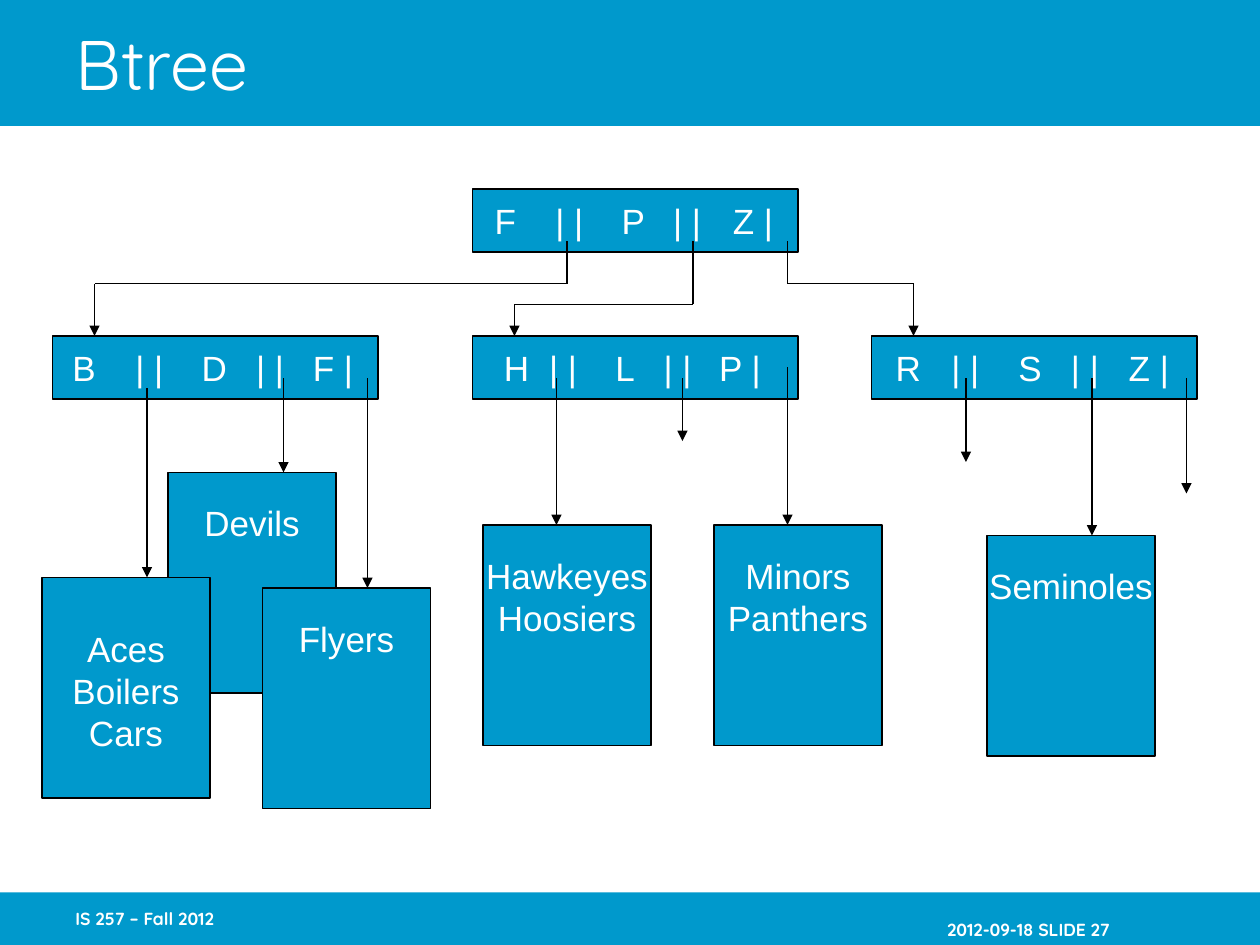
"""Build a slide that shows a B-tree of team names."""
from dataclasses import dataclass

from lxml import etree
from pptx import Presentation
from pptx import util as u
from pptx.dml import color
from pptx.enum import shapes, text
from pptx.oxml import ns

SCALE = 7620
COLORS = {"blue": "0099CC", "black": "000000", "white": "FFFFFF"}
NODE_SIZE = (310, 60)
LEAF_SIZE = (160, 210)
CHILD_TOP = 320
KEY_SEPARATOR = "| |"


@dataclass(frozen=True)
class Node:
    left: int
    top: int
    keys: tuple[str, str, str]
    stops: tuple[int, ...]


@dataclass(frozen=True)
class Leaf:
    left: int
    top: int
    names: tuple[str, ...]
    text_top: int = 28


@dataclass(frozen=True)
class Branch:
    start: int
    bend: int
    end: int


@dataclass(frozen=True)
class Drop:
    x: int
    top: int
    bottom: int


NODES = [
    Node(450, 180, ("F", "P", "Z"), (21, 79, 142, 191, 248)),
    Node(830, CHILD_TOP, ("R", "S", "Z"), (23, 76, 140, 190, 245)),
    Node(450, CHILD_TOP, ("H", "L", "P"), (30, 73, 136, 182, 235)),
    Node(50, CHILD_TOP, ("B", "D", "F"), (19, 79, 142, 194, 248)),
]
LEAVES = [
    Leaf(160, 450, ("Devils",)),
    Leaf(40, 550, ("Aces", "Boilers", "Cars"), 48),
    Leaf(680, 500, ("Minors", "Panthers")),
    Leaf(940, 510, ("Seminoles",)),
    Leaf(250, 560, ("Flyers",)),
    Leaf(460, 500, ("Hawkeyes", "Hoosiers")),
]
BRANCHES = [Branch(540, 270, 90), Branch(660, 290, 490), Branch(750, 270, 870)]
DROPS = [
    Drop(140, 370, 550), Drop(270, 360, 450), Drop(350, 360, 560),
    Drop(530, 360, 500), Drop(650, 360, 420), Drop(750, 350, 500),
    Drop(920, 360, 440), Drop(1040, 360, 510), Drop(1130, 360, 470),
]


def px(length: int) -> u.Emu:
    return u.Emu(length * SCALE)


def rgb(name: str) -> color.RGBColor:
    return color.RGBColor.from_string(COLORS[name])


def set_frame(frame, anchor, left=0, top=0, right=0, bottom=0, wrap=True) -> None:
    frame.vertical_anchor = anchor
    frame.word_wrap = wrap
    frame.margin_left, frame.margin_top = px(left), px(top)
    frame.margin_right, frame.margin_bottom = px(right), px(bottom)


def add_span(para, words: str, size: int, font: str, bold: bool = False) -> None:
    span = para.add_run()
    span.text = words
    span.font.size = u.Pt(size)
    span.font.name = font
    span.font.bold = bold
    span.font.color.rgb = rgb("white")


def add_box(page, left: int, top: int, width: int, height: int, outlined=True):
    box = page.shapes.add_shape(
        shapes.MSO_SHAPE.RECTANGLE, px(left), px(top), px(width), px(height))
    box.shadow.inherit = False
    box.fill.solid()
    box.fill.fore_color.rgb = rgb("blue")
    if outlined:
        box.line.color.rgb = rgb("black")
        box.line.width = u.Pt(0.75)
    else:
        box.line.fill.background()
    return box


def add_tab_stops(para, positions: list[int]) -> None:
    properties = para._p.get_or_add_pPr()
    tabs = etree.SubElement(properties, ns.qn("a:tabLst"))
    for position in positions:
        etree.SubElement(tabs, ns.qn("a:tab"), pos=str(px(position)), algn="l")


def add_node(page, node: Node) -> None:
    frame = add_box(page, node.left, node.top, *NODE_SIZE).text_frame
    first, *others = node.stops
    set_frame(frame, text.MSO_ANCHOR.MIDDLE, left=first)
    para = frame.paragraphs[0]
    para.alignment = text.PP_ALIGN.LEFT
    add_tab_stops(para, [stop - first for stop in others])
    low, middle, high = node.keys
    fields = (low, KEY_SEPARATOR, middle, KEY_SEPARATOR, f"{high} |")
    add_span(para, "\t".join(fields), 20, "Arial")


def add_leaf(page, leaf: Leaf) -> None:
    frame = add_box(page, leaf.left, leaf.top, *LEAF_SIZE).text_frame
    set_frame(frame, text.MSO_ANCHOR.TOP, top=leaf.text_top, wrap=False)
    for index, name in enumerate(leaf.names):
        para = frame.add_paragraph() if index else frame.paragraphs[0]
        para.alignment = text.PP_ALIGN.CENTER
        add_span(para, name, 20, "Arial")


def add_line(page, x1: int, y1: int, x2: int, y2: int, arrow=False) -> None:
    line = page.shapes.add_connector(
        shapes.MSO_CONNECTOR.STRAIGHT, px(x1), px(y1), px(x2), px(y2))
    line.line.color.rgb = rgb("black")
    line.line.width = u.Pt(0.75)
    if arrow:
        etree.SubElement(line.line._get_or_add_ln(), ns.qn("a:tailEnd"), type="triangle")
    etree.SubElement(line.element.spPr, ns.qn("a:effectLst"))


def add_branch(page, branch: Branch) -> None:
    add_line(page, branch.start, 230, branch.start, branch.bend)
    add_line(page, branch.start, branch.bend, branch.end, branch.bend)
    add_line(page, branch.end, branch.bend, branch.end, CHILD_TOP, arrow=True)


def add_footer(page, left: int, words: str, align, top: int, right: int) -> None:
    box = page.shapes.add_textbox(px(left), px(850), px(250), px(50))
    set_frame(box.text_frame, text.MSO_ANCHOR.MIDDLE, 12, top, right, 6)
    para = box.text_frame.paragraphs[0]
    para.alignment = align
    add_span(para, words, 10, "Quicksand", bold=True)


def add_title(page, words: str) -> None:
    title = page.shapes.title
    title.left, title.top, title.width, title.height = px(60), px(0), px(1020), px(120)
    set_frame(title.text_frame, text.MSO_ANCHOR.MIDDLE, 12, 6, 12, 6)
    para = title.text_frame.paragraphs[0]
    para.alignment = text.PP_ALIGN.LEFT
    add_span(para, words, 40, "Quicksand")
    title.element.getparent().append(title.element)


def main() -> None:
    deck = Presentation()
    deck.slide_width, deck.slide_height = px(1200), px(900)
    page = deck.slides.add_slide(deck.slide_layouts[5])
    add_box(page, 0, 0, 1200, 120, outlined=False)
    add_box(page, 0, 850, 1200, 50, outlined=False)
    add_footer(page, 890, "2012-09-18 SLIDE 27", text.PP_ALIGN.RIGHT, 26, 83)
    add_footer(page, 60, "IS 257 – Fall 2012", text.PP_ALIGN.LEFT, 6, 0)
    add_title(page, "Btree")
    for node in NODES:
        add_node(page, node)
    for leaf in LEAVES:
        add_leaf(page, leaf)
    for branch in BRANCHES:
        add_branch(page, branch)
    for drop in DROPS:
        add_line(page, drop.x, drop.top, drop.x, drop.bottom, arrow=True)
    deck.save("out.pptx")


if __name__ == "__main__":
    main()
